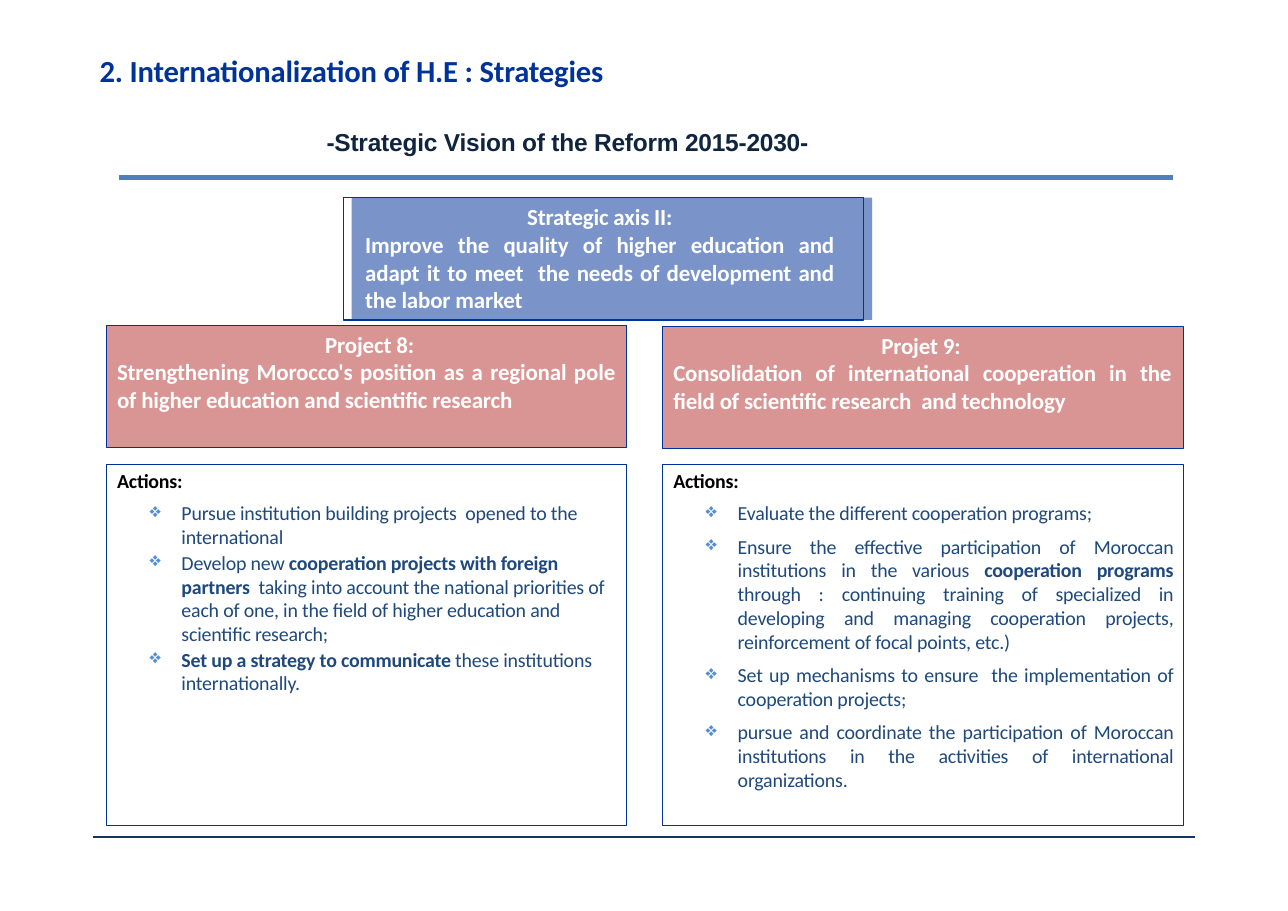
from collections import namedtuple
from dataclasses import dataclass

from lxml import etree
from pptx import Presentation
from pptx.dml.color import RGBColor
from pptx.enum.shapes import MSO_CONNECTOR as Connector, MSO_SHAPE as Preset
from pptx.enum.text import MSO_ANCHOR as Anchor, MSO_AUTO_SIZE as AutoSize, PP_ALIGN as Align
from pptx.oxml.ns import qn
from pptx.util import Pt

Box = namedtuple("Box", "left top width height")


@dataclass(frozen=True)
class Theme:
    navy: str = "003399"
    rose: str = "D89593"
    rule: str = "4F80BC"
    footer: str = "16365D"
    ink: str = "0F243F"
    body: str = "1F497C"
    bullet: str = "548ED4"
    black: str = "000000"
    white: str = "FFFFFF"
    title_size: int = 20
    subtitle_size: int = 16
    card_size: int = 15
    body_size: int = 13
    font: str = "Calibri"
    subtitle_font: str = "Arial"


THEME = Theme()
TITLE = ["2. ", "Internationalization ", "of ", "H.E : Strategies"]
AXIS = ("Strategic axis II:",
        "Improve the quality of higher education and adapt it to meet  the needs "
        "of development and the labor market")
# Each action is a list of (text, bold) runs.
PROJECT_8 = dict(
    heading="Project 8:",
    goal="Strengthening Morocco's position as a regional pole of higher education "
         "and scientific research",
    align=Align.LEFT, gap=0.9,
    actions=[
        [("Pursue institution building projects  opened to the international", False)],
        [("Develop new ", False), ("cooperation projects with foreign partners", True),
         ("  taking into account the national priorities of each of one, in the field "
          "of higher education and scientific research;", False)],
        [("Set up a strategy to communicate ", True),
         ("these institutions internationally.", False)],
    ])
PROJECT_9 = dict(
    heading="Projet 9:",
    goal="Consolidation of international cooperation in the field of scientific "
         "research  and technology",
    align=Align.JUSTIFY, gap=6,
    actions=[
        [("Evaluate the different cooperation programs;", False)],
        [("Ensure the effective participation of Moroccan institutions in the various ", False),
         ("cooperation programs ", True),
         ("through : continuing training of specialized in developing and managing "
          "cooperation projects, reinforcement of focal points, etc.)", False)],
        [("Set up mechanisms to ensure  the implementation of cooperation projects;", False)],
        [("pursue and coordinate the participation of Moroccan institutions in the "
          "activities of international organizations.", False)],
    ])


def add_run(paragraph, text, size, color, bold=True, font=THEME.font, tracking=-0.1):
    run = paragraph.add_run()
    run.text = text
    run.font.name, run.font.size, run.font.bold = font, Pt(size), bold
    run.font.color.rgb = RGBColor.from_string(color)
    run._r.get_or_add_rPr().set("spc", str(round(tracking * 100)))


def prepare_frame(shape, left=0, top=0, right=0):
    frame = shape.text_frame
    frame.word_wrap, frame.auto_size = True, AutoSize.NONE
    frame.vertical_anchor = Anchor.TOP
    frame.margin_left, frame.margin_top = Pt(left), Pt(top)
    frame.margin_right, frame.margin_bottom = Pt(right), 0
    frame.paragraphs[0].alignment = Align.LEFT
    return frame


def indent(paragraph, left, first=0):
    properties = paragraph._p.get_or_add_pPr()
    properties.set("marL", str(Pt(left)))
    properties.set("indent", str(Pt(first)))
    return properties


def add_bullet(paragraph):
    properties = indent(paragraph, 21.4, -20.9)
    color = etree.SubElement(properties, qn("a:buClr"))
    etree.SubElement(color, qn("a:srgbClr"), val=THEME.bullet)
    etree.SubElement(properties, qn("a:buChar"), char="❖")


def add_rectangle(slide, box, fill=None, line=None, opacity=None):
    shape = slide.shapes.add_shape(Preset.RECTANGLE, *map(Pt, box))
    shape.shadow.inherit = False
    if fill:
        shape.fill.solid()
        shape.fill.fore_color.rgb = RGBColor.from_string(fill)
    else:
        shape.fill.background()
    if line:
        shape.line.color.rgb = RGBColor.from_string(line)
        shape.line.width = Pt(0.75)
    else:
        shape.line.fill.background()
    if opacity:
        color = shape.fill._xPr.find(".//" + qn("a:srgbClr"))
        etree.SubElement(color, qn("a:alpha"), val=str(opacity * 1000))
    return shape


def add_rule(slide, left, right, top, color, width):
    rule = slide.shapes.add_connector(Connector.STRAIGHT, Pt(left), Pt(top), Pt(right), Pt(top))
    rule.line.color.rgb = RGBColor.from_string(color)
    rule.line.width = Pt(width)
    etree.SubElement(rule._element.spPr, qn("a:effectLst"))


def add_header(slide, box):
    title = slide.shapes.title
    title.left, title.top, title.width, title.height = map(Pt, (box.left, box.top, 339, 25.2))
    paragraph = prepare_frame(title, left=0.9, top=1.8).paragraphs[0]
    for text in TITLE:
        add_run(paragraph, text, THEME.title_size, THEME.navy, tracking=-0.15)

    subtitle = slide.shapes.add_textbox(Pt(box.left + 149.2), Pt(box.top + 50.6), Pt(368), Pt(20))
    add_run(prepare_frame(subtitle).paragraphs[0], "-Strategic Vision of the Reform 2015-2030-",
            THEME.subtitle_size, THEME.ink, font=THEME.subtitle_font)
    add_rule(slide, box.left + 13.7, box.left + box.width, box.top + box.height, THEME.rule, 3.12)


def add_axis(slide, box):
    """Place the axis frame over a translucent panel shifted to its right."""
    panel = Box(box.left + 5.5, box.top, box.width, box.height)
    add_rectangle(slide, panel, THEME.navy, opacity=52)
    frame = prepare_frame(add_rectangle(slide, box, line=THEME.navy), 14.4, 3.6, 19.2)
    heading, goal = frame.paragraphs[0], frame.add_paragraph()
    heading.alignment, goal.alignment = Align.CENTER, Align.JUSTIFY
    for paragraph, text in zip((heading, goal), AXIS):
        add_run(paragraph, text, THEME.card_size, THEME.white)


def add_project(slide, box, project):
    """Stack the project card on its panel of actions."""
    card_box = Box(box.left, box.top, box.width, 80)
    card = add_rectangle(slide, card_box, THEME.rose, THEME.navy)
    frame = prepare_frame(card, 7, 3.3, 7.5)
    heading, goal = frame.paragraphs[0], frame.add_paragraph()
    indent(heading, 136)
    goal.alignment = Align.JUSTIFY
    for paragraph, text in ((heading, project["heading"]), (goal, project["goal"])):
        add_run(paragraph, text, THEME.card_size, THEME.white)

    panel_height = 236.2
    panel_top = box.top + box.height - panel_height
    panel = add_rectangle(slide, Box(box.left, panel_top, box.width, panel_height),
                          line=THEME.navy)
    add_run(prepare_frame(panel, 7, 2.8).paragraphs[0], "Actions:", THEME.body_size, THEME.black)

    actions = slide.shapes.add_textbox(Pt(box.left + 27.7), Pt(panel_top + 24.1),
                                       Pt(306), Pt(195))
    frame = prepare_frame(actions)
    for number, runs in enumerate(project["actions"]):
        paragraph = frame.add_paragraph() if number else frame.paragraphs[0]
        paragraph.alignment = project["align"]
        paragraph.space_before = Pt(project["gap"] if number else 0)
        add_bullet(paragraph)
        for text, bold in runs:
            add_run(paragraph, text, THEME.body_size, THEME.body, bold)


def main():
    presentation = Presentation()
    presentation.slide_width, presentation.slide_height = Pt(841.68), Pt(595.44)
    slide = presentation.slides.add_slide(presentation.slide_layouts[5])
    add_header(slide, Box(64.2, 32.4, 702.6, 83.5))
    add_axis(slide, Box(224.3, 129.2, 340.2, 80))
    bottom = 539.6
    for left, top, project in ((69.5, 212.6, PROJECT_8), (433, 213.4, PROJECT_9)):
        add_project(slide, Box(left, top, 340.2, bottom - top), project)
    add_rule(slide, 60.7, 780.9, 547.2, THEME.footer, 1.2)
    presentation.save("out.pptx")


if __name__ == "__main__":
    main()
